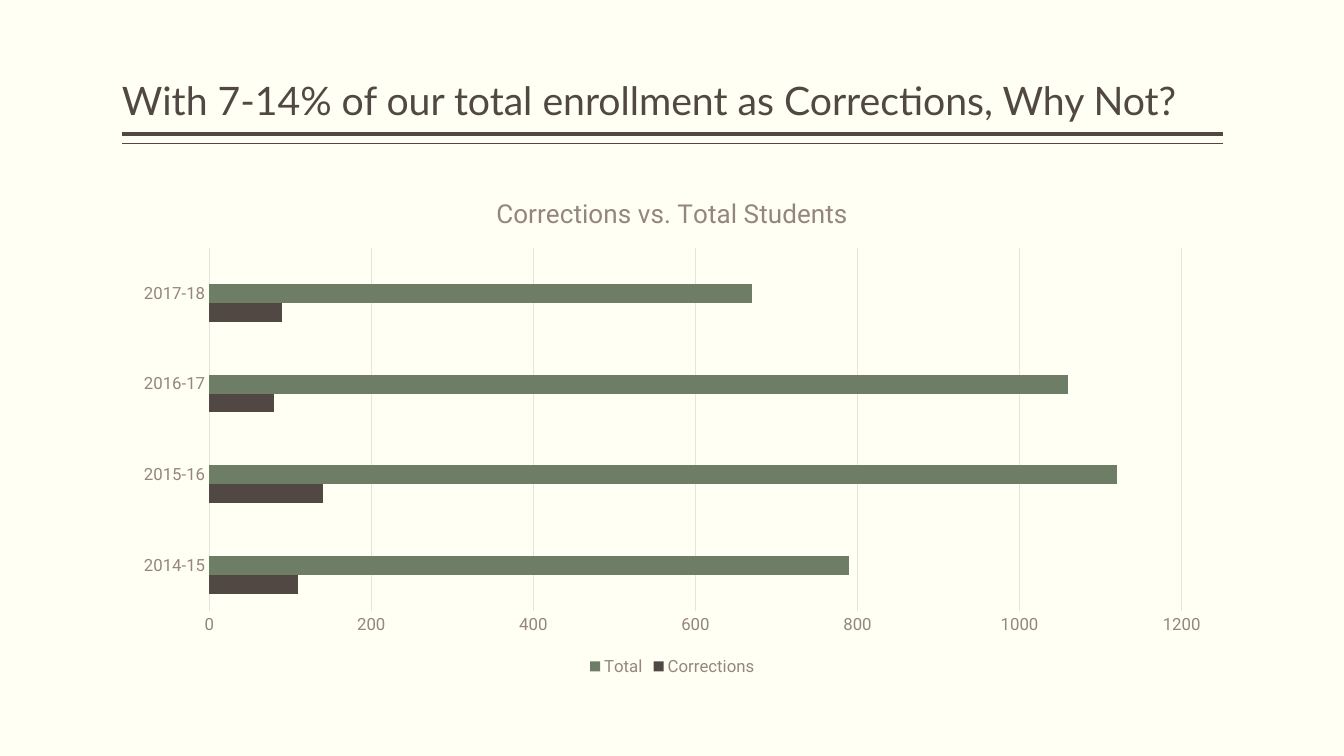
import pptx
import pptx.chart.data
import pptx.dml.color
import pptx.enum.chart
import pptx.enum.shapes
import pptx.enum.text
import pptx.oxml
import pptx.oxml.ns
import pptx.util
from dataclasses import dataclass

Pt = pptx.util.Pt
RGB = pptx.dml.color.RGBColor.from_string


@dataclass(frozen=True)
class Theme:
    background: RGB = RGB("FFFFF3")
    dark: RGB = RGB("514843")
    muted: RGB = RGB("94867E")
    grid: RGB = RGB("E6E3E1")
    green: RGB = RGB("6D7D66")
    slate: RGB = RGB("525A6A")
    heading_font: str = "Lato"
    chart_font: str = "Roboto"
    heading_size: float = 28
    chart_title_size: float = 18.6
    label_size: float = 12


theme = Theme()
LEFT, WIDTH = 87.12, 786.24


def write_text(frame, text, *, font, size, color, line_spacing=None):
    para = frame.paragraphs[0]
    if line_spacing:
        para.line_spacing = line_spacing
    span = para.add_run()
    span.text = text
    span.font.name = font
    span.font.size = Pt(size)
    span.font.bold = False
    span.font.color.rgb = color


deck = pptx.Presentation()
deck.slide_width, deck.slide_height = Pt(960), Pt(540)
page = deck.slides.add_slide(deck.slide_layouts[6])
page.background.fill.solid()
page.background.fill.fore_color.rgb = theme.background

# Double rule under the heading
for y, weight in ((95.76, 3), (102.6, 1)):
    rule = page.shapes.add_connector(
        pptx.enum.shapes.MSO_CONNECTOR.STRAIGHT, Pt(LEFT + WIDTH), Pt(y), Pt(LEFT), Pt(y))
    rule.line.color.rgb = theme.dark
    rule.line.width = Pt(weight)
    rule._element.spPr.append(pptx.oxml.parse_xml(
        "<a:effectLst %s/>" % pptx.oxml.ns.nsdecls("a")))

# Heading
box = page.shapes.add_textbox(Pt(LEFT), Pt(5.76), Pt(WIDTH), Pt(86.4))
frame = box.text_frame
frame.word_wrap = True
frame.vertical_anchor = pptx.enum.text.MSO_ANCHOR.BOTTOM
frame.margin_left = frame.margin_right = 0
write_text(frame, "With 7-14% of our total enrollment as Corrections, Why Not?",
           font=theme.heading_font, size=theme.heading_size, color=theme.dark, line_spacing=0.9)

# Chart data; the empty third series leaves room above each pair of bars
series_list = (
    ("Corrections", (110, 140, 80, 90), theme.dark),
    ("Total", (790, 1120, 1060, 670), theme.green),
    ("Column1", (None,) * 4, theme.slate),
)
data = pptx.chart.data.CategoryChartData()
data.categories = ["2014-15", "2015-16", "2016-17", "2017-18"]
for name, values, color in series_list:
    data.add_series(name, values)
chart = page.shapes.add_chart(
    pptx.enum.chart.XL_CHART_TYPE.BAR_CLUSTERED,
    Pt(LEFT), Pt(126), Pt(WIDTH), Pt(360), data).chart
chart.font.name = theme.chart_font
chart.font.size = Pt(theme.label_size)
chart.font.color.rgb = theme.muted

# Bars
plot = chart.plots[0]
plot.gap_width = 182
plot.overlap = 0
plot.vary_by_categories = False
for series, (name, values, color) in zip(plot.series, series_list):
    series.format.fill.solid()
    series.format.fill.fore_color.rgb = color

# Chart title
chart.has_title = True
write_text(chart.chart_title.text_frame, "Corrections vs. Total Students",
           font=theme.chart_font, size=theme.chart_title_size, color=theme.muted)
chart.chart_title.include_in_layout = False

# Axes
for axis in (chart.category_axis, chart.value_axis):
    axis.major_tick_mark = axis.minor_tick_mark = pptx.enum.chart.XL_TICK_MARK.NONE
chart.category_axis.format.line.color.rgb = theme.grid
chart.category_axis.format.line.width = Pt(0.75)
chart.value_axis.format.line.fill.background()
chart.value_axis.minimum_scale, chart.value_axis.maximum_scale = 0, 1200
chart.value_axis.major_unit = 200
grid_line = chart.value_axis.major_gridlines.format.line
grid_line.color.rgb = theme.grid
grid_line.width = Pt(0.75)

# Legend without the empty series
chart.has_legend = True
legend = chart.legend
legend.position = pptx.enum.chart.XL_LEGEND_POSITION.BOTTOM
legend.include_in_layout = False
legend._element.find(pptx.oxml.ns.qn("c:legendPos")).addnext(pptx.oxml.parse_xml(
    '<c:legendEntry %s><c:idx val="0"/><c:delete val="1"/></c:legendEntry>'
    % pptx.oxml.ns.nsdecls("c")))

deck.save("out.pptx")
